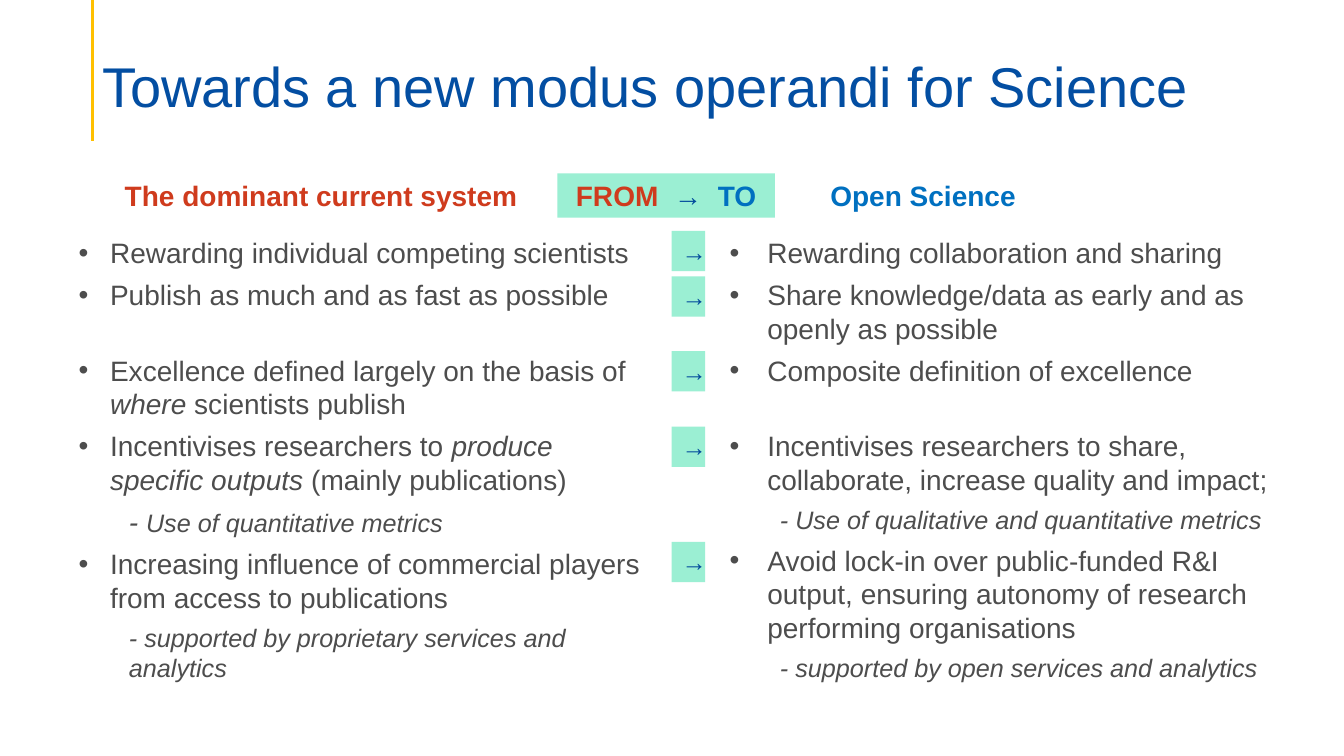
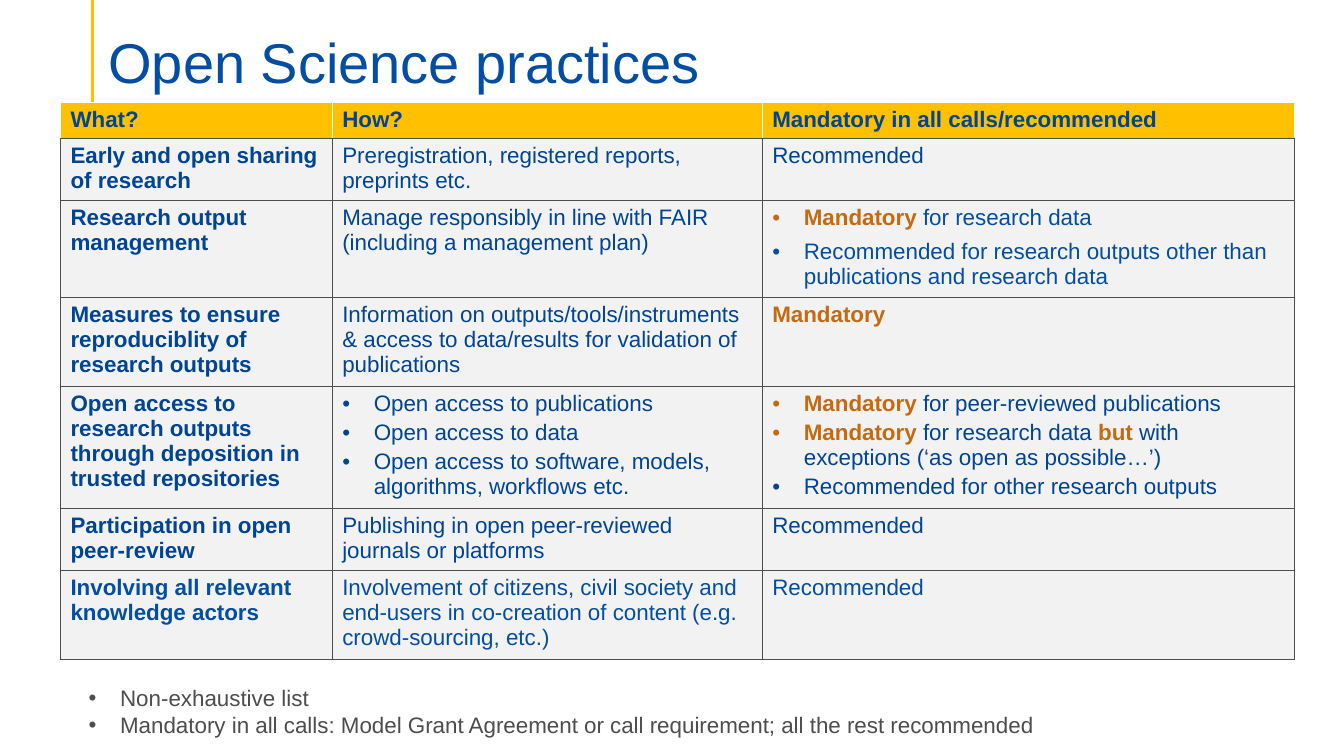
from lxml.etree import SubElement
from pptx import Presentation
from pptx.dml.color import RGBColor
from pptx.enum.shapes import MSO_CONNECTOR, MSO_SHAPE
from pptx.enum.text import MSO_ANCHOR, MSO_AUTO_SIZE, PP_ALIGN
from pptx.oxml import parse_xml
from pptx.oxml.ns import nsdecls, qn
from pptx.util import Inches, Pt

COLUMNS, ROWS = 160, 90
COLORS = {
    "title": "034EA2", "body": "4D4D4D", "accent": "FFC000", "mint": "9BEFD3",
    "from": "CF3B1D", "to": "0070C0", "arrow": "024B9C", "table": "004494",
    "mandatory": "C46A11", "cell": "F2F2F2", "white": "FFFFFF",
}
FONT = "Arial"


def grid(cells):
    return Inches(cells / 12)


def color_of(name):
    return RGBColor.from_string(COLORS[name])


def span(text, **look):
    return text, look


def line(*spans, **look):
    return spans, look


def add_text(frame, *spans, size=20, color="body", bold=False, italic=False, level=0,
             indent=0, hanging=0, bullet=False, after=0, leading=1.0,
             align=PP_ALIGN.LEFT):
    para = frame.paragraphs[0]
    if para.runs:
        para = frame.add_paragraph()
    para.level = level
    settings = para._p.get_or_add_pPr()
    settings.set("marL", str(grid(indent)))
    settings.set("indent", str(-grid(hanging)))
    if bullet:
        SubElement(settings, qn("a:buFont")).set("typeface", FONT)
        SubElement(settings, qn("a:buChar")).set("char", "•")
    else:
        SubElement(settings, qn("a:buNone"))
    para.alignment = align
    para.line_spacing = leading
    para.space_before = Pt(0)
    para.space_after = Pt(after)
    base = dict(size=size, color=color, bold=bold, italic=italic, tracking=0)
    for item in spans:
        text, changes = span(item) if isinstance(item, str) else item
        look = base | changes
        run = para.add_run()
        run.text = text
        run.font.name = FONT
        run.font.size = Pt(look["size"])
        run.font.bold = look["bold"]
        run.font.italic = look["italic"]
        run.font.color.rgb = color_of(look["color"])
        if look["tracking"]:
            run._r.get_or_add_rPr().set("spc", str(round(look["tracking"] * 100)))


def add_lines(frame, lines, **look):
    for item in lines:
        spans, changes = line(item) if isinstance(item, str) else item
        add_text(frame, *spans, **(look | changes))


class Deck:
    def __init__(self):
        self.deck = Presentation()
        self.deck.slide_width = grid(COLUMNS)
        self.deck.slide_height = grid(ROWS)
        self.page = None

    def place(self, box, left, top, width, height):
        box.left, box.top = grid(left), grid(top)
        box.width, box.height = grid(width), grid(height)
        frame = box.text_frame
        frame.word_wrap = True
        frame.auto_size = MSO_AUTO_SIZE.NONE
        frame.vertical_anchor = MSO_ANCHOR.TOP
        return frame

    def add_page(self, layout, title, *area):
        self.page = self.deck.slides.add_slide(self.deck.slide_layouts[layout])
        rule = self.page.shapes.add_connector(
            MSO_CONNECTOR.STRAIGHT, grid(11), 0, grid(11), grid(16.8))
        rule.line.color.rgb = color_of("accent")
        rule.line.width = Pt(2.25)
        SubElement(rule._element.spPr, qn("a:effectLst"))
        frame = self.place(self.page.shapes.title, *area)
        frame.vertical_anchor = MSO_ANCHOR.BOTTOM
        frame.margin_bottom = 0
        add_text(frame, title, size=40, color="title", leading=0.9)

    def add_list(self, index, area, lines, **look):
        frame = self.place(self.page.placeholders[index], *area)
        add_lines(frame, lines, **look)

    def add_tag(self, area, *spans, **look):
        box = self.page.shapes.add_shape(MSO_SHAPE.RECTANGLE, *map(grid, area))
        box.shadow.inherit = False
        box.fill.solid()
        box.fill.fore_color.rgb = color_of("mint")
        box.line.fill.background()
        frame = self.place(box, *area)
        add_text(frame, *spans, bold=True, color="arrow", align=PP_ALIGN.CENTER, **look)

    def style_cell(self, cell, fill, edges):
        cell.fill.solid()
        cell.fill.fore_color.rgb = color_of(fill)
        settings = cell._tc.get_or_add_tcPr()
        for place, (side, color) in enumerate(zip("LRTB", edges)):
            settings.insert(place, parse_xml(
                f'<a:ln{side} {nsdecls("a")} w="12700"><a:solidFill>'
                f'<a:srgbClr val="{COLORS[color]}"/></a:solidFill></a:ln{side}>'))

    def add_table(self, left, top, widths, heights, rows):
        table = self.page.shapes.add_table(
            len(rows), len(widths), grid(left), grid(top),
            grid(sum(widths)), grid(sum(heights))).table
        table.horz_banding = False
        for column, width in zip(table.columns, widths):
            column.width = grid(width)
        for number, (row, height, texts) in enumerate(zip(table.rows, heights, rows)):
            row.height = grid(height)
            header = number == 0
            color = "title" if number == len(rows) - 1 else "table"
            for column, (cell, content) in enumerate(zip(row.cells, texts)):
                edges = ["white"] * 3 + ["body"] if header else ["body"] * 4
                self.style_cell(cell, "accent" if header else "cell", edges)
                lines = content if isinstance(content, list) else [content]
                add_lines(cell.text_frame, lines, size=16, color=color,
                          bold=header or column == 0)

    def save(self):
        self.deck.save("out.pptx")


def item(*spans, indent=3.75, after=6, **look):
    return line(*spans, bullet=True, indent=indent, hanging=indent, after=after, **look)


def detail(*spans):
    return line(*spans, level=1, indent=6, after=6, size=18, italic=True)


def heading(text, color, indent):
    return line(text, color=color, bold=True, indent=indent, after=16.8)


def add_modus_operandi(deck):
    deck.add_page(3, "Towards a new modus operandi for Science", 10.95, 0.1, 146.2, 14.2)
    top, width, height = 20.65, 69.7, 61.8
    extra = 30
    deck.add_list(1, (8.15, top, width, height), [
        heading("The dominant current system", "from", 5.5),
        item("Rewarding individual competing scientists"),
        item("Publish as much and as fast as possible", after=extra),
        item("Excellence defined largely on the basis of ",
             span("where", italic=True), " scientists publish"),
        item("Incentivises researchers to ",
             span("produce specific outputs ", italic=True), "(mainly publications)"),
        detail(span("- ", size=20), "Use of quantitative metrics"),
        item("Increasing influence of commercial players from access to publications"),
        detail("- supported by proprietary services and analytics"),
    ])
    wide = 4.5
    deck.add_list(2, (85.65, top, width, height), [
        heading("Open Science", "to", 12),
        item("Rewarding collaboration and sharing", indent=wide),
        item("Share knowledge/data as early and as openly as possible", indent=wide),
        item("Composite definition of excellence", indent=wide, after=extra),
        item("Incentivises researchers to share, collaborate, increase quality "
             "and impact;", indent=wide),
        detail("- Use of qualitative and quantitative metrics"),
        item("Avoid lock-in over public-funded R&I output, ensuring autonomy of "
             "research performing organisations", indent=wide),
        detail("- supported by open services and analytics"),
    ])
    gap = span(" ", tracking=5.6)
    deck.add_tag((66.35, top, 25.9, 5.25), span("FROM", color="from"), gap, "→", gap,
                 span("TO", color="to"))
    for arrow_top in (27.5, 32.9, 41.8, 50.8, 64.5):
        deck.add_tag((79.95, arrow_top, 4, 4.8), "→", size=18)


def add_practices(deck):
    deck.add_page(1, "Open Science practices", 11.7, 1.1, 138, 10.3)
    must = dict(color="mandatory", bold=True)
    rows = [
        ["What?", "How?", "Mandatory in all calls/recommended"],
        ["Early and open sharing of research",
         "Preregistration, registered reports, preprints etc.", "Recommended"],
        ["Research output management",
         "Manage responsibly in line with FAIR (including a management plan)",
         [item(span("Mandatory ", **must), "for research data", color="title"),
          item("Recommended for research outputs other than publications and "
               "research data", color="title")]],
        ["Measures to ensure reproduciblity of research outputs",
         "Information on outputs/tools/instruments & access to data/results for "
         "validation of publications", line(span("Mandatory", **must))],
        ["Open access to research outputs through deposition in trusted repositories",
         [item("Open access to publications", after=3),
          item("Open access to data", after=3),
          item("Open access to software, models, algorithms, workflows etc.", after=3)],
         [item(span("Mandatory", **must), " for peer-reviewed publications", after=3),
          item(span("Mandatory", **must), " for research data", span(" but ", **must),
               "with exceptions (‘as open as possible…’)", after=3),
          item("Recommended for other research outputs", after=3)]],
        ["Participation in open peer-review",
         "Publishing in open peer-reviewed journals or platforms", "Recommended"],
        ["Involving all relevant knowledge actors",
         "Involvement of citizens, civil society and end-users in co-creation of "
         "content (e.g. crowd-sourcing, etc.)", "Recommended"],
    ]
    deck.add_table(7.2, 12.2, (32.35, 51.2, 63.4),
                   (4.3, 7.4, 11.55, 10.55, 14.55, 7.4, 10.55), rows)
    deck.add_list(1, (9.35, 80.9, 138, 7.7), [
        item("Non-exhaustive list", after=0),
        item("Mandatory in all calls: Model Grant Agreement or call requirement; "
             "all the rest recommended", after=0),
    ], size=16)


def main():
    deck = Deck()
    add_modus_operandi(deck)
    add_practices(deck)
    deck.save()


if __name__ == "__main__":
    main()
